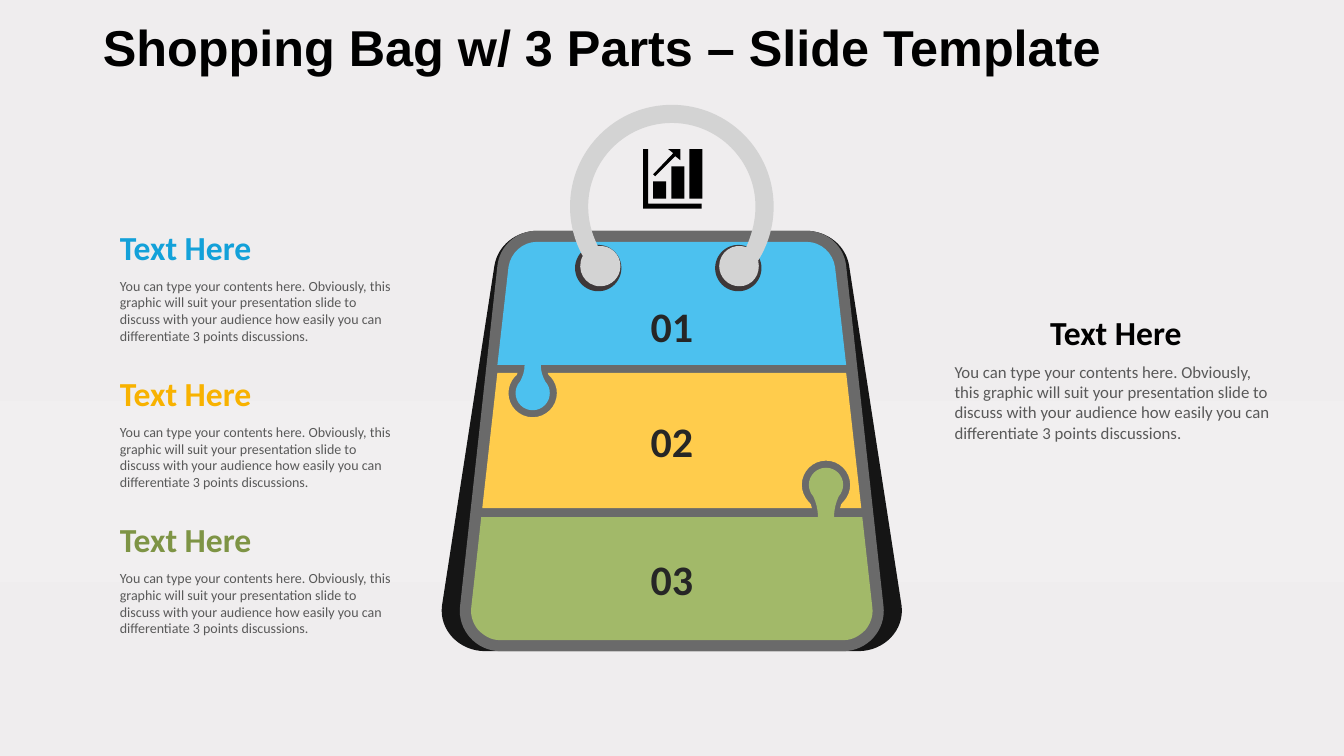
from math import cos, radians, sin, tan

from lxml.etree import Element, SubElement
from pptx import Presentation
from pptx.dml.color import RGBColor
from pptx.enum.shapes import MSO_SHAPE as Shape
from pptx.enum.text import MSO_ANCHOR as Anchor, MSO_AUTO_SIZE as AutoSize, PP_ALIGN as Align
from pptx.oxml.ns import qn
from pptx.util import Inches, Pt

COLORS = {
    "black": "000000", "shell": "151515", "frame": "6A6A6A", "grommet": "3E3839",
    "handle": "D3D3D3", "number": "262626", "body": "595959",
    "blue": "4CC1EF", "yellow": "FFCC4C", "green": "A2B969",
    "blue_text": "13A1D9", "yellow_text": "F8B200", "green_text": "7E9445",
}
BACKGROUND = [(0, "EFEDEE"), (53, "F1EFF0"), (77, "EFEDEE"), (100, "EFEBEC")]
HEADING = "Text Here"
BODY = ("You can type your contents here. Obviously, this graphic will suit your "
        "presentation slide to discuss with your audience how easily you can "
        "differentiate 3 points discussions.")


def color(name):
    return RGBColor.from_string(COLORS[name])


# Outlines are lists of segments: (point,) for a line, (control, control, point) for a curve
def lines(*points):
    return [(point,) for point in points]


def arc(x, y, radius, *angles):
    """Circle arcs through the given angles, in degrees from the x axis."""
    def place(angle, along=0):
        turn = radians(angle)
        return (x + radius * (cos(turn) - along * sin(turn)),
                y + radius * (sin(turn) + along * cos(turn)))

    path = lines(place(angles[0]))
    for start, end in zip(angles, angles[1:]):
        reach = 4 / 3 * tan(radians(end - start) / 4)
        path.append((place(start, reach), place(end, -reach), place(end)))
    return path


def backward(path):
    turned = lines(path[-1][-1])
    for previous, segment in zip(path[-2::-1], path[:0:-1]):
        turned.append((*segment[:-1][::-1], previous[-1]))
    return turned


def moved(path, x=0, y=0, flip_x=1, flip_y=1):
    return [tuple((x + flip_x * px, y + flip_y * py) for px, py in segment) for segment in path]


def mirrored(half):
    """A left half closed by its reflection about the vertical axis."""
    return half + moved(backward(half), flip_x=-1)


def knob(x, y, radius, neck, base):
    """A puzzle knob from the right of its neck to the left; base is relative to y."""
    depth = abs(base)
    join_x, join_y = radius * cos(radians(42)), radius * sin(radians(42))
    rise = join_y - depth
    right = [((neck, depth),), ((neck, depth + 0.4 * rise),
                                (neck + 0.4 * (join_x - neck), depth + 0.7 * rise),
                                (join_x, join_y))]
    left = moved(backward(right), flip_x=-1)
    path = right + arc(0, 0, radius, 42, 0, -90, -180, -222)[1:] + left[1:]
    return moved(path, x, y, flip_y=1 if base > 0 else -1)


# Shape helpers
def paint(shape, fill):
    shape.shadow.inherit = False
    shape.fill.solid()
    shape.fill.fore_color.rgb = color(fill)
    shape.line.fill.background()
    return shape


def add_outline(page, origin, path, fill):
    placed = [[(Inches(x), Inches(y)) for x, y in segment] for segment in moved(path, *origin)]
    builder = page.shapes.build_freeform(*placed[0][-1], scale=1.0)
    builder.add_line_segments([segment[-1] for segment in placed[1:]], close=True)
    shape = builder.convert_to_shape()
    # Turn the curved segments into Bezier curves
    for node, segment in zip(shape.element.xpath(".//a:lnTo"), placed[1:]):
        if len(segment) == 3:
            bezier = Element(qn("a:cubicBezTo"))
            for x, y in segment:
                SubElement(bezier, qn("a:pt"), x=str(x - shape.left), y=str(y - shape.top))
            node.getparent().replace(node, bezier)
    return paint(shape, fill)


def add_preset(page, kind, box, fill):
    return paint(page.shapes.add_shape(kind, *map(Inches, box)), fill)


def set_text(frame, text, size, fill, bold=False, align=Align.LEFT, font="Calibri"):
    frame.word_wrap = True
    para = frame.paragraphs[0]
    para.text = text
    para.alignment = align
    para.font.name = font
    para.font.size = Pt(size)
    para.font.bold = bold
    para.font.color.rgb = color(fill)
    return para


# Background and title
def add_background(page):
    fill = page.background.fill
    fill.gradient()
    fill.gradient_angle = 270
    stops = page.element.xpath(".//p:bg//a:gsLst")[0]
    for stop in list(stops):
        stops.remove(stop)
    for position, value in BACKGROUND:
        stop = SubElement(stops, qn("a:gs"), pos=str(position * 1000))
        SubElement(stop, qn("a:srgbClr"), val=value)


def add_title(page, box, text):
    title = page.shapes.title
    title.left, title.top, title.width, title.height = map(Inches, box)
    frame = title.text_frame
    frame.auto_size = AutoSize.NONE
    frame.vertical_anchor = Anchor.TOP
    frame.margin_left, frame.margin_right = Inches(0.1), 0
    set_text(frame, text, 36, "black", bold=True, font="Arial").line_spacing = 0.9


# Shopping bag: x runs from its vertical axis, y from the top of its handle
def add_bag(page, box):
    left, top, width, _ = box
    origin = (left + width / 2, top)

    shell = [((-1.85, 5.42),), ((-2.11, 5.42), (-2.31, 5.21), (-2.28, 4.97)),
             ((-1.76, 1.6),), ((-1.73, 1.4), (-1.55, 1.25), (-1.33, 1.25))]
    frame = [((-1.7, 5.42),), ((-1.94, 5.42), (-2.13, 5.21), (-2.1, 4.97)),
             ((-1.73, 1.6),), ((-1.71, 1.4), (-1.54, 1.25), (-1.34, 1.25))]
    add_outline(page, origin, mirrored(shell), "shell")
    add_outline(page, origin, mirrored(frame), "frame")

    blue_center, green_center = (-1.38, 2.86), (1.53, 3.77)
    blue_edge = [((-1.73, 2.58),), ((-1.62, 1.61),),
                 ((-1.6, 1.47), (-1.48, 1.36), (-1.34, 1.36))]
    green_edge = [((-1.89, 4.09),), ((-1.99, 4.99),),
                  ((-2, 5.07), (-1.97, 5.15), (-1.92, 5.21)),
                  ((-1.86, 5.27), (-1.79, 5.31), (-1.71, 5.31))]
    blue = mirrored(blue_edge) + knob(*blue_center, 0.17, 0.08, -0.28)
    yellow = (lines((1.73, 2.66)) + knob(*blue_center, 0.24, 0.15, -0.2)
              + lines((-1.73, 2.66), (-1.88, 4))
              + backward(knob(*green_center, 0.24, 0.14, 0.23)) + lines((1.88, 4)))
    green = mirrored(green_edge) + knob(*green_center, 0.17, 0.08, 0.32)
    panels = [("01", blue, "blue", 0.04), ("02", yellow, "yellow", 0.04),
              ("03", green, "green", 0.54)]
    for number, path, fill, inset in panels:
        text = add_outline(page, origin, path, fill).text_frame
        text.margin_left = text.margin_right = text.margin_bottom = Inches(0.04)
        text.margin_top = Inches(inset)
        text.vertical_anchor = Anchor.MIDDLE
        set_text(text, number, 30, "number", bold=True, align=Align.CENTER)

    for x in (-0.96, 0.43):
        add_preset(page, Shape.OVAL, (origin[0] + x, top + 1.39, 0.46, 0.46), "grommet")

    def handle_half(end_x, outer, enter, leave):
        return (arc(0, 1.01, 1.01, -90, -180, outer)
                + arc(end_x, 1.6, 0.2, enter, 90, 0, leave)[1:]
                + arc(0, 1.01, 0.83, -207, -180, -90)[1:])

    right = moved(backward(handle_half(-0.67, -212, 190, -110)), flip_x=-1)
    add_outline(page, origin, handle_half(-0.71, -209, 208, -97) + right[1:], "handle")


# Heading with a paragraph below it
def add_card(page, box, heading_color, size, align=Align.LEFT):
    left, top, width, height = box
    split = 0.5
    parts = [((left, top, width, split), HEADING, 24, heading_color, True, align, Anchor.BOTTOM),
             ((left, top + split, width, height - split), BODY, size, "body", False,
              Align.LEFT, Anchor.TOP)]
    for area, text, points, fill, bold, side, anchor in parts:
        frame = page.shapes.add_textbox(*map(Inches, area)).text_frame
        frame.margin_left = frame.margin_right = 0
        frame.vertical_anchor = anchor
        frame.auto_size = AutoSize.SHAPE_TO_FIT_TEXT
        set_text(frame, text, points, fill, bold, side)


# Growth chart icon
def add_icon(page, box):
    left, top, width, height = box
    axes = lines((0, 0), (0.05, 0), (0.05, height - 0.05), (width, height - 0.05),
                 (width, height), (0, height))
    arrow = lines((0.37, 0.11), (0.37, 0), (0.25, 0), (0.3, 0.04), (0.1, 0.25),
                  (0.12, 0.27), (0.32, 0.07))
    add_outline(page, (left, top), axes, "black")
    for index, bar in enumerate((0.17, 0.32, 0.49)):
        area = (left + 0.1 + 0.18 * index, top + 0.49 - bar, 0.13, bar)
        add_preset(page, Shape.RECTANGLE, area, "black")
    add_outline(page, (left, top), arrow, "black")


def main():
    deck = Presentation()
    deck.slide_width, deck.slide_height = Inches(40 / 3), Inches(7.5)
    page = deck.slides.add_slide(deck.slide_layouts[5])
    add_background(page)
    add_title(page, (0.92, 0.18, 11.5, 0.81), "Shopping Bag w/ 3 Parts – Slide Template")
    add_bag(page, (4.39, 1.04, 4.55, 5.42))
    for index, name in enumerate(("blue_text", "yellow_text", "green_text")):
        add_card(page, (1.19, 2.2 + 1.45 * index, 2.77, 1.27), name, 10)
    add_card(page, (9.47, 3.04, 3.2, 1.41), "black", 12, Align.CENTER)
    add_icon(page, (6.38, 1.48, 0.58, 0.59))
    deck.save("out.pptx")


if __name__ == "__main__":
    main()
